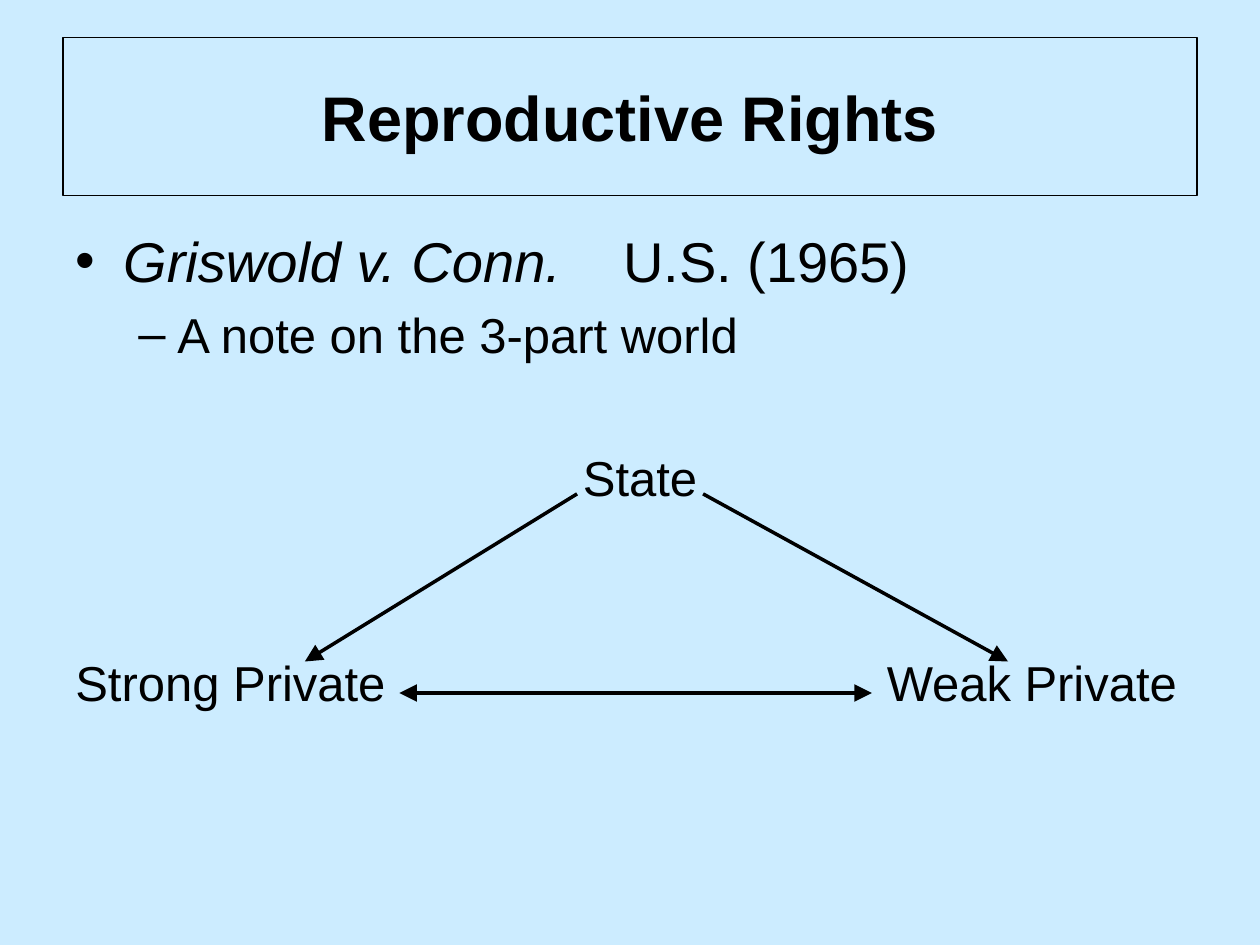
from lxml import etree
from pptx import Presentation
from pptx.dml.color import RGBColor
from pptx.enum.shapes import MSO_CONNECTOR as CONN, MSO_SHAPE as SHAPE
from pptx.enum.text import MSO_ANCHOR as ANCHOR, PP_ALIGN as ALIGN
from pptx.oxml.ns import qn
from pptx.util import Inches, Pt

W, H = 10, 7.5
FONT = "Arial"
INK = "000000"
BACKGROUND = "CCECFF"


def color(hex_text):
    return RGBColor.from_string(hex_text)


def add_run(p, text, size, bold=False, italic=False):
    r = p.add_run()
    r.text = text
    r.font.name, r.font.size = FONT, Pt(size)
    r.font.bold, r.font.italic = bold, italic
    r.font.color.rgb = color(INK)


def set_bullet(p, char, indent, hang, tab=None):
    """Set bullet, indents and an optional tab stop; lengths are in inches."""
    pPr = p._p.get_or_add_pPr()
    pPr.set("marL", str(Inches(indent)))
    pPr.set("indent", str(Inches(-hang)))
    etree.SubElement(pPr, qn("a:buFont"), typeface=FONT)
    etree.SubElement(pPr, qn("a:buChar"), char=char)
    if tab:
        tabs = etree.SubElement(pPr, qn("a:tabLst"))
        etree.SubElement(tabs, qn("a:tab"), pos=str(Inches(tab)), algn="l")


def add_title(s, text):
    sp = s.shapes.add_shape(SHAPE.RECTANGLE, Inches(0.05 * W), Inches(0.04 * H),
                            Inches(0.9 * W), Inches(H / 6))
    sp.shadow.inherit = False
    sp.fill.background()
    sp.line.color.rgb = color(INK)
    sp.line.width = Pt(0.75)
    tf = sp.text_frame
    tf.word_wrap = True
    tf.vertical_anchor = ANCHOR.MIDDLE
    p = tf.paragraphs[0]
    p.alignment = ALIGN.CENTER
    add_run(p, text, 36, bold=True)


def add_text_frame(s, left, top, width, height):
    box = s.shapes.add_textbox(*map(Inches, (left, top, width, height)))
    box.text_frame.word_wrap = True
    return box.text_frame


def add_bullets(s):
    tf = add_text_frame(s, 0.05 * W, 1.75, 9.17, 1.3)
    p = tf.paragraphs[0]
    set_bullet(p, "•", 0.38, 0.38, tab=4.35)
    add_run(p, "Griswold v. Conn.", 32, italic=True)
    add_run(p, "\tU.S. (1965)", 32)

    p = tf.add_paragraph()
    set_bullet(p, "–", 0.81, 0.31)
    p.space_before = Pt(6)
    add_run(p, "A note on the 3-part world", 28)


def add_label(s, text, left, top, width, align=ALIGN.LEFT):
    p = add_text_frame(s, left, top, width, 0.55).paragraphs[0]
    p.alignment = align
    add_run(p, text, 28)


def add_arrow(s, start, end, both_ways=False):
    line = s.shapes.add_connector(CONN.STRAIGHT, *map(Inches, start + end))
    line.line.color.rgb = color(INK)
    line.line.width = Pt(2)
    ln = line.line._get_or_add_ln()
    for tag in ["a:headEnd", "a:tailEnd"] if both_ways else ["a:tailEnd"]:
        etree.SubElement(ln, qn(tag), type="triangle", w="lg", len="lg")
    etree.SubElement(line._element.spPr, qn("a:effectLst"))


def main():
    prs = Presentation()
    prs.slide_width, prs.slide_height = Inches(W), Inches(H)
    s = prs.slides.add_slide(prs.slide_layouts[6])
    s.background.fill.solid()
    s.background.fill.fore_color.rgb = color(BACKGROUND)

    add_title(s, "Reproductive Rights")
    add_bullets(s)

    private_top = 5.13
    add_label(s, "State", 4.33, 3.5, 1.5, ALIGN.CENTER)
    add_label(s, "Strong Private", 0.05 * W, private_top, 2.8)
    add_label(s, "Weak Private", 6.94, private_top, 2.7)

    state_y, private_y = 3.92, 5.25
    add_arrow(s, (5.58, state_y), (8, private_y))
    add_arrow(s, (4.58, state_y), (2.42, private_y))
    add_arrow(s, (3.17, 5.5), (6.92, 5.5), both_ways=True)
    prs.save("out.pptx")


if __name__ == "__main__":
    main()
